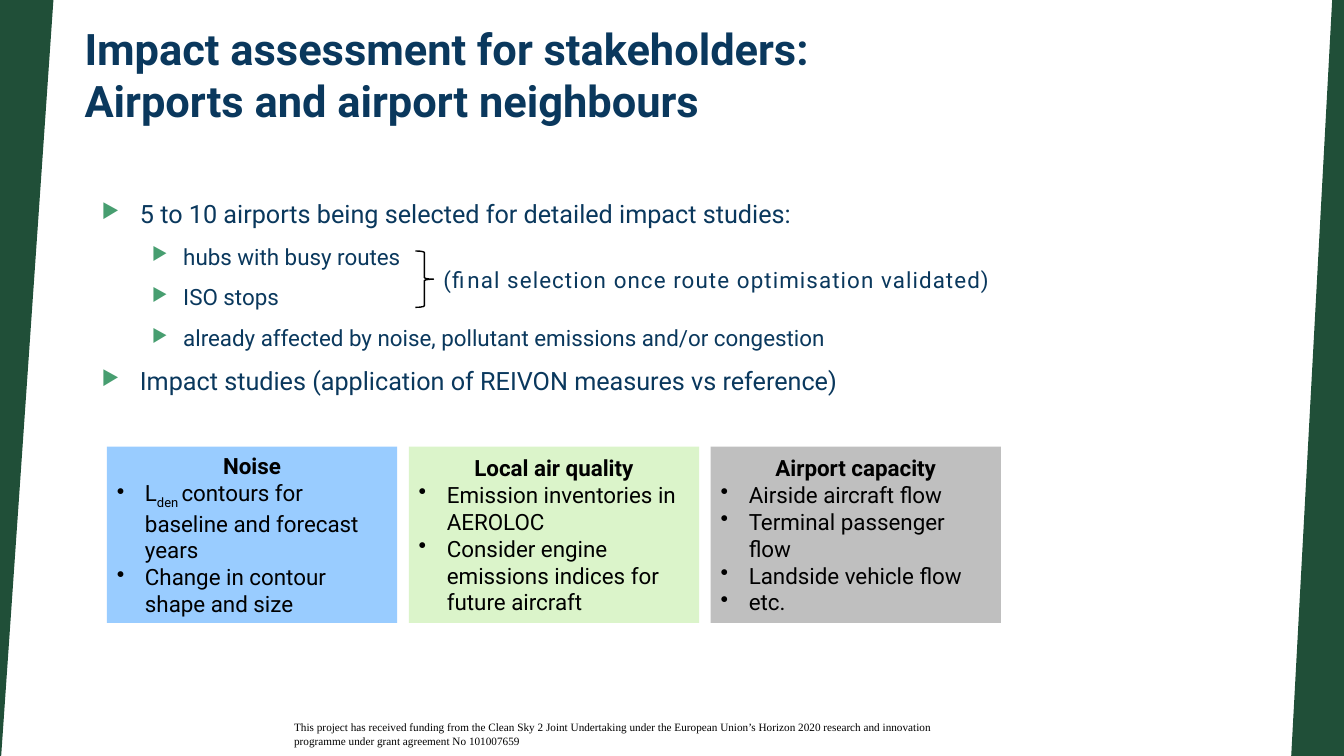
"""Build the airport impact assessment slide on an 80 by 45 grid."""
from dataclasses import dataclass

from lxml import etree
from pptx import Presentation
from pptx import util as u
from pptx.dml.color import RGBColor
from pptx.enum import shapes, text
from pptx.oxml import ns

COLUMNS, ROWS = 80, 45
MODULE = u.Inches(1) / 6


@dataclass(frozen=True)
class Theme:
    font: str = "Roboto"
    footer_font: str = "Times New Roman"
    navy: str = "0A385D"
    forest: str = "204F38"
    bullet: str = "479E70"
    black: str = "000000"
    blue: str = "99CCFF"
    green: str = "DBF4CA"
    grey: str = "BFBFBF"
    title: int = 31
    lead: int = 18
    regular: int = 16
    footer: int = 8


THEME = Theme()


@dataclass(frozen=True)
class Frame:
    column: float
    row: float
    width: float
    height: float

    def lengths(self) -> list[int]:
        return [grid(n) for n in (self.column, self.row, self.width, self.height)]


@dataclass(frozen=True)
class Style:
    size: int = THEME.regular
    color: str = THEME.black
    font: str = THEME.font
    bold: bool = False


@dataclass(frozen=True)
class Bullet:
    mark: str
    margin: float
    hanging: float
    color: str = ""
    percent: int = 100


@dataclass(frozen=True)
class Point:
    words: str
    level: int


@dataclass(frozen=True)
class Span:
    words: str
    baseline: int = 0


@dataclass(frozen=True)
class Card:
    heading: str
    fill: str
    items: list[list[Span]]


LEVELS = [Bullet("▶", 0.38, 0.38, THEME.bullet, 80),
          Bullet("▶", 0.81, 0.31, THEME.bullet, 80)]
LEVEL_STYLES = [Style(THEME.lead, THEME.navy), Style(THEME.regular, THEME.navy)]
CARD_BULLET = Bullet("•", 0.28, 0.28)

TITLE = ["Impact assessment for stakeholders:", "Airports and airport neighbours"]
POINTS = [
    Point("5 to 10 airports being selected for detailed impact studies:", 0),
    Point("hubs with busy routes", 1),
    Point("ISO stops", 1),
    Point("already affected by noise, pollutant emissions and/or congestion", 1),
    Point("Impact studies (application of REIVON measures vs reference)", 0),
]
NOTE = "(final selection once route optimisation validated)"
FOOTER = ("This project has received funding from the Clean Sky 2 Joint Undertaking "
          "under the European Union’s Horizon 2020 research and innovation programme "
          "under grant agreement No 101007659")
CARDS = [
    Card("Noise", THEME.blue, [
        [Span("L"), Span("den ", -25000), Span("contours for baseline and forecast years")],
        [Span("Change in contour shape and size")]]),
    Card("Local air quality", THEME.green, [
        [Span("Emission inventories in AEROLOC")],
        [Span("Consider engine emissions indices for future aircraft")]]),
    Card("Airport capacity", THEME.grey, [
        [Span("Airside aircraft flow")], [Span("Terminal passenger flow")],
        [Span("Landside vehicle flow")], [Span("etc.")]]),
]
FIRST_CARD = Frame(6.36, 26.58, 17.28, 10.5)
CARD_STEP = 17.97


def grid(modules: float) -> int:
    return round(modules * MODULE)


def paint(shape, color: str) -> None:
    shape.shadow.inherit = False
    shape.fill.solid()
    shape.fill.fore_color.rgb = RGBColor.from_string(color)
    shape.line.fill.background()


def add_span(para, words: str, style: Style, baseline: int = 0):
    span = para.add_run()
    span.text = words
    font = span.font
    font.name, font.size, font.bold = style.font, u.Pt(style.size), style.bold
    font.color.rgb = RGBColor.from_string(style.color)
    if baseline:
        span._r.get_or_add_rPr().set("baseline", str(baseline))
    return span


def add_bullet(para, bullet: Bullet) -> None:
    properties = para._p.get_or_add_pPr()
    properties.set("marL", str(u.Inches(bullet.margin)))
    properties.set("indent", str(-u.Inches(bullet.hanging)))
    if bullet.color:
        color = etree.SubElement(properties, ns.qn("a:buClr"))
        etree.SubElement(color, ns.qn("a:srgbClr"), val=bullet.color)
    etree.SubElement(properties, ns.qn("a:buSzPct"), val=str(bullet.percent * 1000))
    etree.SubElement(properties, ns.qn("a:buChar"), char=bullet.mark)


def add_box(page, frame: Frame, wrap: bool = True):
    box = page.shapes.add_textbox(*frame.lengths())
    box.text_frame.word_wrap = wrap
    return box.text_frame


def add_edges(page) -> None:
    left = page.shapes.add_shape(shapes.MSO_SHAPE.ISOSCELES_TRIANGLE,
                                 *Frame(0, 0, 3.18, 46).lengths())
    left.adjustments[0] = 1
    left.rotation = 180
    paint(left, THEME.forest)
    corners = [(79.3, 0), (COLUMNS, 0), (COLUMNS, ROWS), (76.86, ROWS)]
    start, *rest = [(grid(column), grid(row)) for column, row in corners]
    outline = page.shapes.build_freeform(*start)
    outline.add_line_segments(rest, close=True)
    paint(outline.convert_to_shape(), THEME.forest)


def add_title(page) -> None:
    para = add_box(page, Frame(4.44, 1.02, 58.14, 8.64)).paragraphs[0]
    style = Style(THEME.title, THEME.navy, bold=True)
    for index, line in enumerate(TITLE):
        if index:
            para.add_line_break()
        add_span(para, line, style)


def add_points(page) -> None:
    body = add_box(page, Frame(5.46, 11.52, 68.64, 27.84))
    for index, point in enumerate(POINTS):
        para = body.add_paragraph() if index else body.paragraphs[0]
        para.level = point.level
        add_bullet(para, LEVELS[point.level])
        para.space_before = u.Pt(10 if index else 0)
        add_span(para, point.words, LEVEL_STYLES[point.level])


def add_note(page) -> None:
    brace = page.shapes.add_shape(shapes.MSO_SHAPE.RIGHT_BRACE,
                                  *Frame(24.72, 14.94, 1.08, 3.36).lengths())
    brace.shadow.inherit = False
    brace.fill.background()
    brace.line.color.rgb = RGBColor.from_string(THEME.black)
    brace.line.width = u.Pt(1)
    note = add_box(page, Frame(25.8, 15.54, 34.98, 2.22), wrap=False)
    note.auto_size = text.MSO_AUTO_SIZE.SHAPE_TO_FIT_TEXT
    span = add_span(note.paragraphs[0], NOTE, LEVEL_STYLES[1])
    span._r.get_or_add_rPr().set("spc", "80")


def add_card(page, card: Card, frame: Frame) -> None:
    box = page.shapes.add_shape(shapes.MSO_SHAPE.RECTANGLE, *frame.lengths())
    paint(box, card.fill)
    content = box.text_frame
    content.word_wrap = True
    content.vertical_anchor = text.MSO_ANCHOR.MIDDLE
    heading = content.paragraphs[0]
    heading.alignment = text.PP_ALIGN.CENTER
    add_span(heading, card.heading, Style(bold=True))
    for item in card.items:
        para = content.add_paragraph()
        para.alignment = text.PP_ALIGN.LEFT
        add_bullet(para, CARD_BULLET)
        for span in item:
            add_span(para, span.words, Style(), span.baseline)


def main() -> None:
    deck = Presentation()
    deck.slide_width, deck.slide_height = grid(COLUMNS), grid(ROWS)
    page = deck.slides.add_slide(deck.slide_layouts[6])
    add_edges(page)
    footer = add_box(page, Frame(16.92, 42.6, 41.04, 2.4))
    add_span(footer.paragraphs[0], FOOTER, Style(THEME.footer, font=THEME.footer_font))
    add_title(page)
    add_points(page)
    add_note(page)
    for index, card in enumerate(CARDS):
        column = FIRST_CARD.column + index * CARD_STEP
        add_card(page, card, Frame(column, FIRST_CARD.row, FIRST_CARD.width, FIRST_CARD.height))
    deck.save("out.pptx")


if __name__ == "__main__":
    main()
